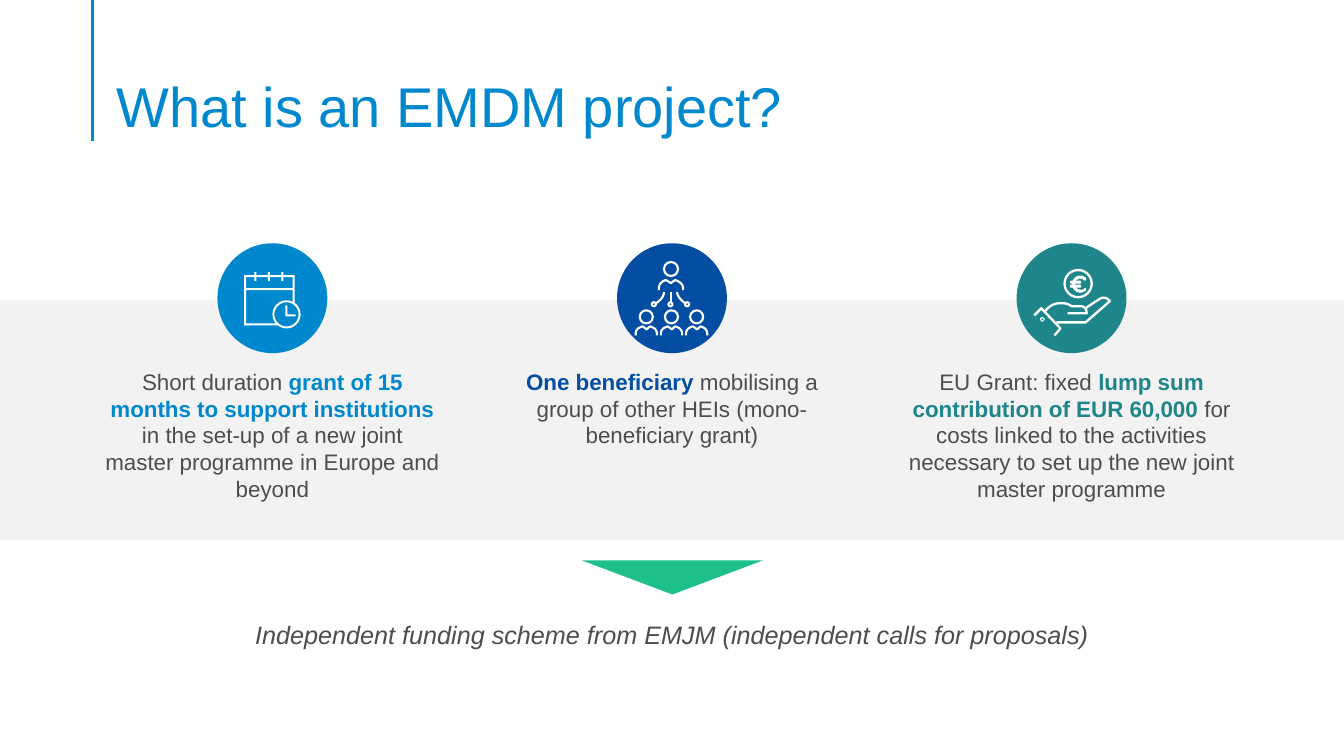
from dataclasses import dataclass

from lxml import etree
from pptx import Presentation
from pptx import util as u
from pptx.dml.color import RGBColor
from pptx.enum import shapes, text
from pptx.oxml.ns import qn


@dataclass(frozen=True)
class Theme:
    font: str = "Arial"
    sky: str = "0088CE"
    navy: str = "034EA2"
    teal: str = "1E858B"
    green: str = "1EC08A"
    grey: str = "4D4D4D"
    band: str = "F2F2F2"
    white: str = "FFFFFF"
    title: int = 40
    body: int = 16
    note: int = 18
    rule: float = 2.25


T = Theme()

# Content: each column is its accent colour and (text, highlighted) pieces
TITLE = "What is an EMDM project?"
NOTE = "Independent funding scheme from EMJM (independent calls for proposals)"
COLUMNS = [
    (T.sky, [("Short duration ", False),
             ("grant of 15 months to support institutions ", True),
             ("in the set-up of a new joint master programme in Europe and beyond", False)]),
    (T.navy, [("One beneficiary ", True),
              ("mobilising a group of other HEIs (mono-beneficiary grant)", False)]),
    (T.teal, [("EU Grant: fixed ", False),
              ("lump sum contribution of EUR 60,000 ", True),
              ("for costs linked to the activities necessary to set up "
               "the new joint master programme", False)]),
]

# Icons on a grid of 106 units across the disc.
# Part: kind, geometry, filled, line width, x offsets, y offsets
FIGURE = "M 38 90 L 38 88 C 38 84 35 82 31 81 L 28 84 L 24 81 C 20 82 17 84 17 88 L 17 90"
LEADER = "M 64 45 L 64 43 C 64 39 60 36 56 35 L 52 38 L 47 35 C 43 36 40 39 40 43 L 40 45"
EURO = ("M 62 47 C 57 47 54 43 54 39 C 54 35 57 31 62 31 C 64 31 65 32 67 33 "
        "C 67 34 67 34 67 35 C 67 35 66 35 66 35 C 65 34 63 33 62 33 "
        "C 58 33 56 36 56 39 C 56 42 58 45 62 45 C 63 45 65 45 66 44 "
        "C 66 43 67 43 67 44 C 67 44 67 45 67 45 C 65 46 64 47 62 47 Z")
EURO_BAR = ("M 61 38 L 53 38 C 52 38 52 38 52 37 C 52 37 52 36 53 36 L 61 36 "
            "C 62 36 62 37 62 37 C 62 38 62 38 61 38 Z")
BUTTON = ("M 23 73 C 22 73 22 74 23 75 C 23 76 24 76 25 75 "
          "C 26 74 26 73 25 73 C 24 72 23 72 23 73 Z")
FINGERS = ("M 26 67 C 31 60 36 58 42 58 C 46 58 49 58 53 61 L 62 61 "
           "C 63 61 68 61 68 68 L 49 68")
PALM = "M 67 63 C 67 63 74 58 79 55 C 84 51 88 52 91 56 L 67 77 L 38 77"
FRAME = ("M 59 80 L 25 80 L 25 30 L 75 30 L 75 58 L 73 58 L 73 32 "
         "L 27 32 L 27 78 L 59 78 Z")
HANDS = "M 76 71 L 66 71 L 66 60 L 68 60 L 68 69 L 76 69 Z"
ONCE = (0,)
ICONS = [
    [("ring", (53, 55, 28, 28), True, 0, ONCE, ONCE),
     ("rect", (26, 43, 48, 2), True, 0, ONCE, ONCE),
     ("rect", (35, 27, 2, 9), True, 0, (0, 13.5, 27), ONCE),
     ("free", FRAME, True, 0, ONCE, ONCE),
     ("free", HANDS, True, 0, ONCE, ONCE)],
    [("oval", (21, 65, 13, 13), False, 1.5, (0, 25, 50), ONCE),
     ("free", FIGURE, False, 1.5, (0, 25, 50), ONCE),
     ("oval", (45, 17, 14, 14), False, 1.5, ONCE, ONCE),
     ("free", LEADER, False, 1.5, ONCE, ONCE),
     ("oval", (33, 57, 4, 4), False, 1.5, (0, 16.5, 33), ONCE),
     ("free", "M 37 58 C 45 53 45 48 45 47", False, 1.5, ONCE, ONCE),
     ("line", (52, 47, 52, 57), False, 1.5, ONCE, ONCE),
     ("free", "M 66 58 C 59 53 58 48 58 47", False, 1.5, ONCE, ONCE)],
    [("free", PALM, False, 1.63, ONCE, ONCE),
     ("free", FINGERS, False, 1.63, ONCE, ONCE),
     ("free", "M 16 70 L 23 63 L 42 83 L 36 90", False, 1.63, ONCE, ONCE),
     ("free", BUTTON, False, 0.75, ONCE, ONCE),
     ("oval", (46, 25, 27, 27), False, 1.63, ONCE, ONCE),
     ("free", EURO, True, 0.75, ONCE, ONCE),
     ("free", EURO_BAR, True, 0.75, ONCE, (0, 4))],
]
PRESETS = {"rect": shapes.MSO_SHAPE.RECTANGLE, "oval": shapes.MSO_SHAPE.OVAL,
           "ring": shapes.MSO_SHAPE.DONUT, "triangle": shapes.MSO_SHAPE.ISOSCELES_TRIANGLE}

# Layout in centimetres
SLIDE_W, SLIDE_H = 33.87, 19.05
DISC, DISC_TOP = 2.69, 6.17
COL_W, COL_H, COL_TOP = 8.43, 3.66, 9.27
COL_PITCH = 10.07
FIRST_CENTRE = SLIDE_W / 2 - COL_PITCH
UNIT = DISC / 106


def paint(sp, fill=None, line=None, width=0):
    sp.shadow.inherit = False
    if fill:
        sp.fill.solid()
        sp.fill.fore_color.rgb = RGBColor.from_string(fill)
    else:
        sp.fill.background()
    if width:
        sp.line.color.rgb = RGBColor.from_string(line)
        sp.line.width = u.Pt(width)
    else:
        sp.line.fill.background()


def add_preset(parent, kind, box, **look):
    sp = parent.add_shape(PRESETS[kind], *map(u.Cm, box))
    paint(sp, **look)
    return sp


def add_rule(parent, ends, color, width):
    c = parent.add_connector(shapes.MSO_CONNECTOR.STRAIGHT, *map(u.Cm, ends))
    c.line.color.rgb = RGBColor.from_string(color)
    c.line.width = u.Pt(width)
    etree.SubElement(c._element.spPr, qn("a:effectLst"))


def outline(commands, steps=8):
    """Turn M, L, C and Z commands into points, sampling each curve."""
    tokens, points = commands.split(), []
    while tokens:
        cmd = tokens.pop(0)
        count = {"M": 2, "L": 2, "C": 6, "Z": 0}[cmd]
        v = [float(tokens.pop(0)) for _ in range(count)]
        if cmd == "C":
            ctrl = [points[-1], v[0:2], v[2:4], v[4:6]]
            for k in range(1, steps + 1):
                t = k / steps
                weights = ((1 - t) ** 3, 3 * t * (1 - t) ** 2, 3 * t * t * (1 - t), t ** 3)
                points.append([sum(w * c[i] for w, c in zip(weights, ctrl)) for i in (0, 1)])
        elif v:
            points.append(v)
    return points


def add_part(parent, left, top, kind, geometry, filled, width):
    look = dict(fill=T.white if filled else None, line=T.white, width=width)
    if kind == "free":
        points = [(u.Cm(x * UNIT), u.Cm(y * UNIT)) for x, y in outline(geometry)]
        fb = parent.build_freeform(*points[0])
        fb.add_line_segments(points[1:], close=geometry.endswith("Z"))
        paint(fb.convert_to_shape(u.Cm(left), u.Cm(top)), **look)
        return
    a, b, c, d = (n * UNIT for n in geometry)
    if kind == "line":
        add_rule(parent, (left + a, top + b, left + c, top + d), T.white, width)
        return
    sp = add_preset(parent, kind, (left + a, top + b, c, d), **look)
    if kind == "ring":
        sp.adjustments[0] = 0.07


def style(r, size, color, bold=False, italic=False):
    r.font.name, r.font.size = T.font, u.Pt(size)
    r.font.color.rgb = RGBColor.from_string(color)
    r.font.bold, r.font.italic = bold, italic


def place(sp, box):
    sp.left, sp.top, sp.width, sp.height = map(u.Cm, box)


def add_text(s, box):
    tf = s.shapes.add_textbox(*map(u.Cm, box)).text_frame
    tf.word_wrap = True
    p = tf.paragraphs[0]
    p.alignment = text.PP_ALIGN.CENTER
    return tf, p


def main():
    prs = Presentation()
    prs.slide_width, prs.slide_height = u.Cm(SLIDE_W), u.Cm(SLIDE_H)
    s = prs.slides.add_slide(prs.slide_layouts[5])

    # Title and its rule
    add_rule(s.shapes, (2.34, 0, 2.34, 3.56), T.sky, T.rule)
    place(s.shapes.title, (2.69, 1.35, 29.21, 2.18))
    tf = s.shapes.title.text_frame
    tf.text = TITLE
    tf.word_wrap, tf.auto_size = True, text.MSO_AUTO_SIZE.NONE
    tf.vertical_anchor, tf.margin_bottom = text.MSO_ANCHOR.BOTTOM, 0
    p = tf.paragraphs[0]
    p.alignment, p.line_spacing = text.PP_ALIGN.LEFT, 0.9
    style(p.runs[0], T.title, T.sky)

    # Band with three columns, each under an icon
    add_preset(s.shapes, "rect", (0, 7.57, SLIDE_W, 6.05), fill=T.band)
    for i, ((accent, pieces), parts) in enumerate(zip(COLUMNS, ICONS)):
        centre = FIRST_CENTRE + i * COL_PITCH
        tf, p = add_text(s, (centre - COL_W / 2, COL_TOP, COL_W, COL_H))
        tf.margin_left = tf.margin_right = tf.margin_top = tf.margin_bottom = 0
        for words, strong in pieces:
            r = p.add_run()
            r.text = words
            style(r, T.body, accent if strong else T.grey, bold=strong)

        icon = s.shapes.add_group_shape().shapes
        left = centre - DISC / 2
        add_preset(icon, "oval", (left, DISC_TOP, DISC, DISC),
                   fill=accent, line=accent, width=T.rule)
        for kind, geometry, filled, width, dxs, dys in parts:
            for dx in dxs:
                for dy in dys:
                    add_part(icon, left + dx * UNIT, DISC_TOP + dy * UNIT,
                             kind, geometry, filled, width)

    # Closing note and pointer
    tf, p = add_text(s, (2.67, 15.49, 28.52, 1.02))
    p.text = NOTE
    style(p.runs[0], T.note, T.grey, italic=True)
    add_preset(s.shapes, "triangle", (14.66, 14.12, 4.57, 0.86), fill=T.green).rotation = 180

    prs.save("out.pptx")


if __name__ == "__main__":
    main()
